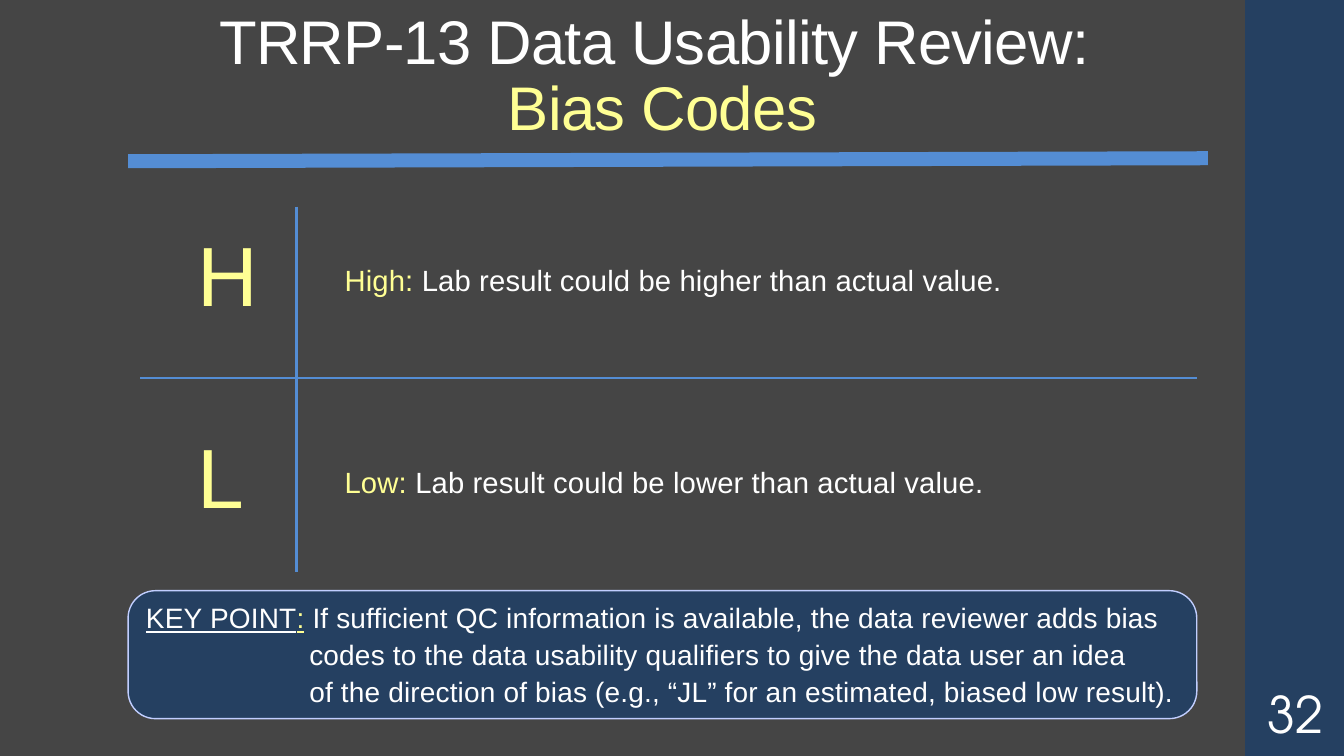
from dataclasses import dataclass

from lxml.etree import SubElement
from pptx import Presentation
from pptx.dml.color import RGBColor
from pptx.enum.shapes import MSO_CONNECTOR, MSO_SHAPE
from pptx.enum.text import MSO_ANCHOR, PP_ALIGN
from pptx.oxml.ns import qn
from pptx.util import Inches, Pt

WIDTH, HEIGHT = Inches(13.33), Inches(7.5)
GREY, NAVY, BLUE, LILAC = "454545", "254061", "548DD4", "C1CEFF"
WHITE, YELLOW = "FFFFFF", "FFFF94"


@dataclass
class Box:
    """A rectangle in percent of the slide's width and height."""
    left: float
    top: float
    width: float
    height: float

    def emu(self) -> tuple:
        return x(self.left), y(self.top), x(self.width), y(self.height)


@dataclass
class Rule:
    """A straight line with its ends in percent of the slide."""
    x1: float
    y1: float
    x2: float
    y2: float
    weight: float


@dataclass
class Run:
    text: str
    size: float
    color: str = WHITE
    font: str = "Arial"
    spacing: int = 0
    raised: int = 0
    underline: bool = False


@dataclass
class Code:
    letter: str
    name: str
    meaning: str


RULES = [
    Rule(9.53, 21.33, 89.87, 20.93, 10),
    Rule(22.06, 27.33, 22.06, 75.73, 2),
    Rule(89.05, 50, 10.43, 50, 2),
]
CODES = [
    Code("H", "High: ", "Lab result could be higher than actual value."),
    Code("L", "Low: ", "Lab result could be lower than actual value."),
]
KEY_LINES = [
    "If sufficient QC information is available, the data reviewer adds bias",
    "codes to the data usability qualifiers to give the data user an idea",
    "of the direction of bias (e.g., “JL” for an estimated, biased low result).",
]


def x(percent: float) -> int:
    return round(WIDTH * percent / 100)


def y(percent: float) -> int:
    return round(HEIGHT * percent / 100)


def rgb(color: str) -> RGBColor:
    return RGBColor.from_string(color)


def apply(target, formats: dict) -> None:
    for name, value in formats.items():
        setattr(target, name, value)


def add_run(p, run: Run) -> None:
    r = p.add_run()
    r.text = run.text
    apply(r.font, {"size": Pt(run.size), "name": run.font,
                   "underline": run.underline})
    r.font.color.rgb = rgb(run.color)
    rPr = r.font._element
    if run.spacing:
        rPr.set("spc", str(run.spacing))
    if run.raised:
        rPr.set("baseline", str(run.raised * 1000))


def add_rule(s, rule: Rule) -> None:
    line = s.shapes.add_connector(MSO_CONNECTOR.STRAIGHT, x(rule.x1),
                                  y(rule.y1), x(rule.x2), y(rule.y2))
    line.line.color.rgb = rgb(BLUE)
    line.line.width = Pt(rule.weight)
    SubElement(line._element.spPr, qn("a:effectLst"))


def add_panel(s, kind: MSO_SHAPE, box: Box, border: str = ""):
    sp = s.shapes.add_shape(kind, *box.emu())
    sp.shadow.inherit = False
    sp.fill.solid()
    sp.fill.fore_color.rgb = rgb(NAVY)
    if border:
        sp.line.color.rgb = rgb(border)
        sp.line.width = Pt(1)
    else:
        sp.line.fill.background()
    return sp


def add_text(s, box: Box, anchor: MSO_ANCHOR):
    tf = s.shapes.add_textbox(*box.emu()).text_frame
    apply(tf, {"word_wrap": True, "vertical_anchor": anchor})
    return tf


def next_paragraph(tf, index: int):
    return tf.add_paragraph() if index else tf.paragraphs[0]


def add_title(s) -> None:
    tf = add_text(s, Box(9.53, 0.4, 79.52, 19.33), MSO_ANCHOR.BOTTOM)
    p = tf.paragraphs[0]
    apply(p, {"alignment": PP_ALIGN.CENTER, "line_spacing": 0.9})
    add_run(p, Run("TRRP-13 Data Usability Review: ", 44, spacing=-50))
    p.add_line_break()
    add_run(p, Run("Bias Codes", 44, YELLOW, spacing=-50))


def add_codes(s) -> None:
    tf = add_text(s, Box(13.95, 29.73, 70.82, 41.47), MSO_ANCHOR.TOP)
    for i, code in enumerate(CODES):
        p = next_paragraph(tf, i)
        tabs = SubElement(p._p.get_or_add_pPr(), qn("a:tabLst"))
        SubElement(tabs, qn("a:tab"), pos=str(Inches(1.46)), algn="l")
        apply(p, {"line_spacing": 0.95, "space_before": Pt(74 * i),
                  "space_after": Pt(2)})
        add_run(p, Run(code.letter + "\t", 60, YELLOW, spacing=10))
        add_run(p, Run(code.name, 36, YELLOW, spacing=10, raised=30))
        add_run(p, Run(code.meaning, 36, spacing=10, raised=30))


def add_key_point(s) -> None:
    sp = add_panel(s, MSO_SHAPE.ROUNDED_RECTANGLE,
                   Box(9.53, 78.13, 79.52, 16.93), LILAC)
    sp.adjustments[0] = 0.214
    tf = sp.text_frame
    apply(tf, {"word_wrap": True, "margin_right": 0,
               "vertical_anchor": MSO_ANCHOR.MIDDLE})
    hang = Inches(1.62)
    for i, line in enumerate(KEY_LINES):
        p = next_paragraph(tf, i)
        apply(p, {"alignment": PP_ALIGN.LEFT, "space_after": Pt(2.5)})
        pPr = p._p.get_or_add_pPr()
        pPr.set("marL", str(hang))
        pPr.set("indent", str(0 if i else -hang))
        if i == 0:
            add_run(p, Run("KEY POINT", 20, spacing=10, underline=True))
            add_run(p, Run(":", 20, YELLOW, spacing=10, underline=True))
            add_run(p, Run(" ", 20, YELLOW, spacing=10))
        add_run(p, Run(line, 20, spacing=10))


def add_slide_number(s) -> None:
    tf = add_text(s, Box(92.65, 90, 7.5, 8.67), MSO_ANCHOR.MIDDLE)
    margins = ("margin_left", "margin_top", "margin_right", "margin_bottom")
    apply(tf, dict.fromkeys(margins, Inches(0.05)))
    p = tf.paragraphs[0]
    p.alignment = PP_ALIGN.CENTER
    add_run(p, Run("32", 36, font="TeX Gyre Adventor"))


def main() -> None:
    prs = Presentation()
    apply(prs, {"slide_width": WIDTH, "slide_height": HEIGHT})
    s = prs.slides.add_slide(prs.slide_layouts[6])
    s.background.fill.solid()
    s.background.fill.fore_color.rgb = rgb(GREY)
    add_panel(s, MSO_SHAPE.RECTANGLE, Box(92.65, 0, 7.35, 100))
    add_slide_number(s)
    add_title(s)
    add_codes(s)
    add_key_point(s)
    for rule in RULES:
        add_rule(s, rule)
    prs.save("out.pptx")


if __name__ == "__main__":
    main()
